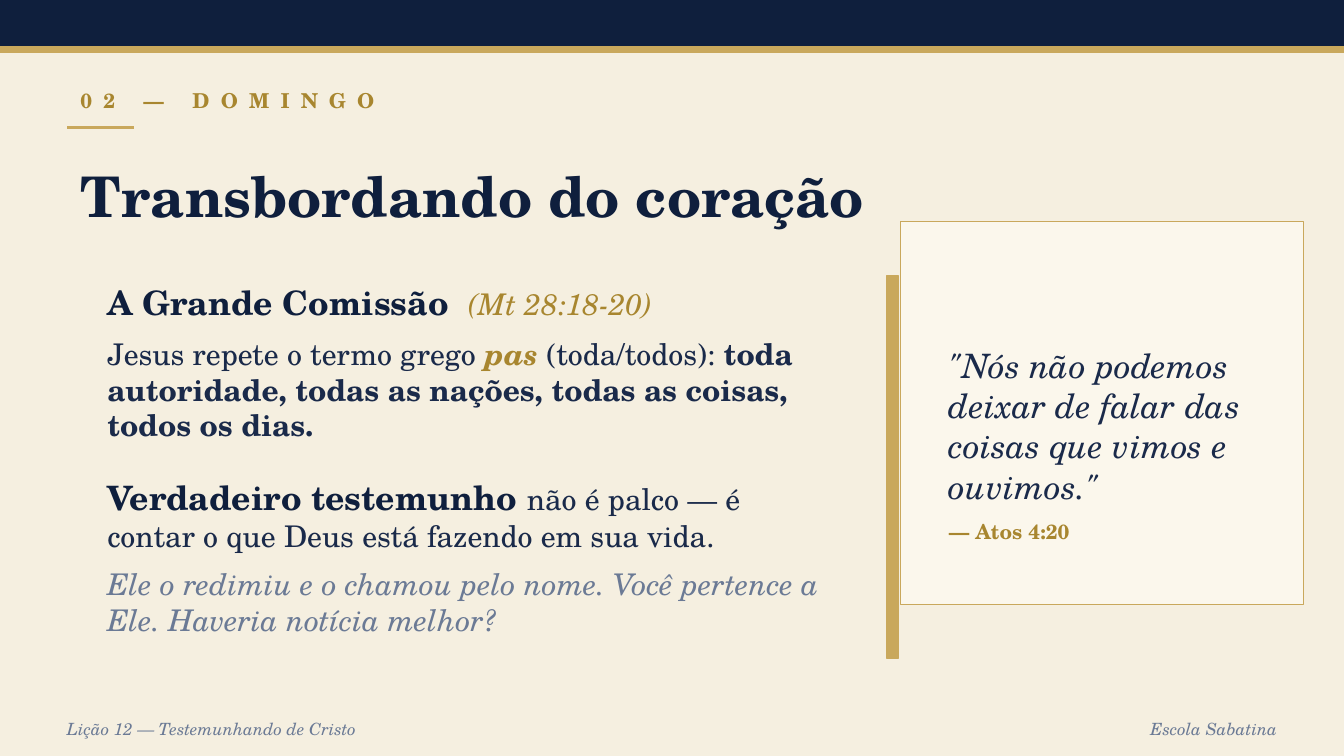
from pptx import Presentation
from pptx.dml.color import RGBColor
from pptx.enum.shapes import MSO_CONNECTOR, MSO_SHAPE
from pptx.enum.text import MSO_ANCHOR, PP_ALIGN
from pptx.oxml.ns import qn
from pptx.util import Emu, Pt
from lxml import etree

RECT = MSO_SHAPE.RECTANGLE
LINE = MSO_CONNECTOR.STRAIGHT
TOP, MID = MSO_ANCHOR.TOP, MSO_ANCHOR.MIDDLE
LEFT, RIGHT = PP_ALIGN.LEFT, PP_ALIGN.RIGHT

CREAM = RGBColor(0xF5, 0xEF, 0xE0)
PAPER = RGBColor(0xFB, 0xF7, 0xEC)
NAVY = RGBColor(0x0F, 0x1F, 0x3D)
INK = RGBColor(0x1A, 0x2A, 0x4A)
GOLD = RGBColor(0xC9, 0xA8, 0x5C)
OCHRE = RGBColor(0xA8, 0x86, 0x2F)
SLATE = RGBColor(0x6B, 0x7A, 0x95)

FONT = "TeX Gyre Schola"
WIDE, HIGH = 2000, 1125
GAP = 7  # points between paragraphs


def px(n):
    """200 px to the inch."""
    return Emu(n * 4572)


def run(words, size=16, color=INK, bold=False, ital=False, space=0):
    return words, size, color, bold, ital, space


def text(slide, box, *paras, anchor=MID, align=LEFT, inset=None):
    """Each paragraph is a list of runs."""
    frame = slide.shapes.add_textbox(*map(px, box)).text_frame
    frame.word_wrap = True
    frame.vertical_anchor = anchor
    if inset is not None:
        frame.margin_left = frame.margin_right = px(inset)
        frame.margin_top = frame.margin_bottom = px(inset)
    for i, runs in enumerate(paras):
        para = frame.add_paragraph() if i else frame.paragraphs[0]
        para.alignment = align
        if i:
            para.space_before = Pt(GAP)
        for words, size, color, bold, ital, space in runs:
            part = para.add_run()
            part.text = words
            font = part.font
            font.name, font.size = FONT, Pt(size)
            font.bold, font.italic = bold, ital
            font.color.rgb = color
            if space:
                part._r.get_or_add_rPr().set("spc", str(space * 100))


def rect(slide, box, fill, edge, width=1):
    shape = slide.shapes.add_shape(RECT, *map(px, box))
    shape.shadow.inherit = False
    shape.fill.solid()
    shape.fill.fore_color.rgb = fill
    shape.line.color.rgb = edge
    shape.line.width = Pt(width)


def rule(slide, x, y, w):
    line = slide.shapes.add_connector(LINE, px(x), px(y), px(x + w), px(y))
    line.line.color.rgb = GOLD
    line.line.width = Pt(1.5)
    etree.SubElement(line._element.spPr, qn("a:effectLst"))


def band(slide, x, y, w, h):
    trim = 8
    rect(slide, (x, y, w, h - trim), NAVY, NAVY)
    rect(slide, (x, y + h - trim, w, trim), GOLD, GOLD)


def foot(slide, x, y, w, h):
    style = dict(size=9, color=SLATE, ital=True)
    text(slide, (x, y, 1200, h),
         [run("Lição 12 — Testemunhando de Cristo", **style)])
    text(slide, (x + w - 400, y, 400, h),
         [run("Escola Sabatina", **style)], align=RIGHT)


def head(slide, x, y, w, h):
    text(slide, (x, y, w, 60),
         [run("02 — DOMINGO", 11, OCHRE, bold=True, space=6)])
    rule(slide, x, y + 70, 100)
    text(slide, (x, y + 90, w, h - 90),
         [run("Transbordando do coração", 30, NAVY, bold=True)])


def body(slide, x, y, w, h):
    part, step = 280, h - 280
    text(slide, (x, y, w, part),
         [run("A Grande Comissão", 18, NAVY, bold=True),
          run(" ", 18, NAVY, bold=True, space=5),
          run("(Mt 28:18-20)", color=OCHRE, ital=True)],
         [run("Jesus repete o termo grego "),
          run("pas", color=OCHRE, bold=True, ital=True),
          run(" (toda/todos): "),
          run("toda autoridade, todas as nações, todas as coisas, "
              "todos os dias.", bold=True)],
         anchor=TOP)
    text(slide, (x, y + step, w, part),
         [run("Verdadeiro testemunho ", 18, NAVY, bold=True),
          run("não é palco — é contar o que Deus está fazendo "
              "em sua vida.")],
         [run("Ele o redimiu e o chamou pelo nome. Você pertence a Ele. "
              "Haveria notícia melhor?", color=SLATE, ital=True)],
         anchor=TOP)


def quote(slide, x, y, w, h):
    rect(slide, (x, y, w, h), PAPER, GOLD, 0.75)
    rect(slide, (x - 20, y + 80, 16, h), GOLD, GOLD)
    text(slide, (x + 56, y + 66, w - 80, h - 40),
         [run('"Nós não podemos deixar de falar das coisas que vimos '
              'e ouvimos."', 18, ital=True)],
         [run("— Atos 4:20", 11, OCHRE, bold=True)],
         inset=16)


def main():
    deck = Presentation()
    deck.slide_width, deck.slide_height = px(WIDE), px(HIGH)
    slide = deck.slides.add_slide(deck.slide_layouts[6])
    slide.background.fill.solid()
    slide.background.fill.fore_color.rgb = CREAM

    band(slide, 0, 0, WIDE, 78)
    foot(slide, 80, 1060, 1840, 50)
    head(slide, 100, 120, 1800, 250)
    body(slide, 140, 410, 1100, 570)
    quote(slide, 1340, 330, 600, 570)
    deck.save("out.pptx")


if __name__ == "__main__":
    main()
